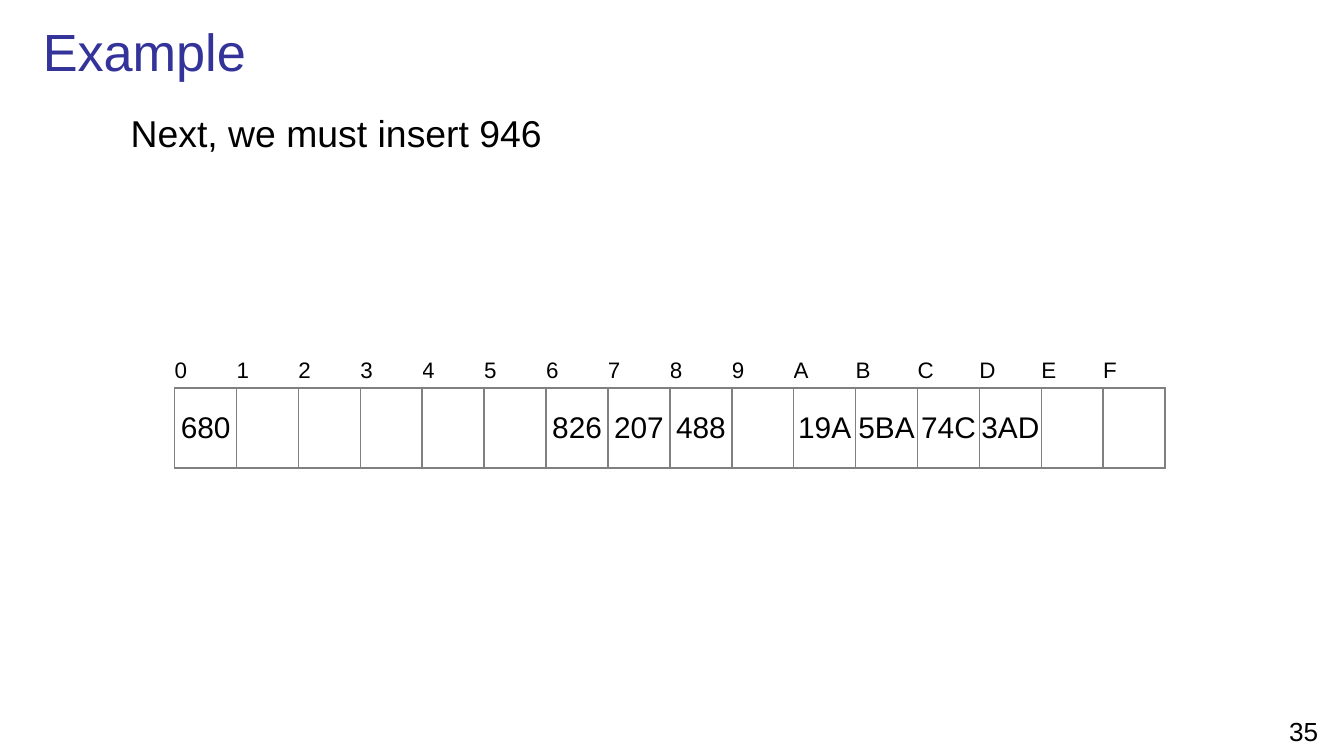
"""Build the slide showing a 16-bin hash table before inserting 946."""
from lxml import etree
from pptx import Presentation
from pptx.dml.color import RGBColor
from pptx.enum.text import MSO_ANCHOR, PP_ALIGN
from pptx.oxml.ns import qn
from pptx.util import Cm, Pt

BLACK = RGBColor(0x00, 0x00, 0x00)
TITLE_BLUE = RGBColor(0x33, 0x33, 0x99)
GRID_GREY = RGBColor(0x80, 0x80, 0x80)
LEFT, CENTER = PP_ALIGN.LEFT, PP_ALIGN.CENTER
TOP, MIDDLE = MSO_ANCHOR.TOP, MSO_ANCHOR.MIDDLE

FONT = "Arial"
BINS = "0123456789ABCDEF"
STORED = {"0": "680", "6": "826", "7": "207", "8": "488",
          "A": "19A", "B": "5BA", "C": "74C", "D": "3AD"}
BIN_WIDTH, LABEL_HEIGHT, BIN_HEIGHT = Cm(1.17), Cm(0.63), Cm(1.52)


def style_paragraph(paragraph, size, color=BLACK, align=LEFT):
    paragraph.alignment = align
    paragraph.font.name = FONT
    paragraph.font.size = Pt(size)
    paragraph.font.bold = False
    paragraph.font.color.rgb = color


def add_text(slide, text, box, size, color=BLACK, align=LEFT, anchor=TOP):
    frame = slide.shapes.add_textbox(*(Cm(length) for length in box)).text_frame
    frame.word_wrap = True
    frame.vertical_anchor = anchor
    frame.text = text
    style_paragraph(frame.paragraphs[0], size, color, align)
    return frame


def add_borders(cell, sides):
    properties = cell._tc.get_or_add_tcPr()
    for side in sides:
        border = etree.SubElement(properties, qn(f"a:ln{side}"), w=str(Pt(1)))
        fill = etree.SubElement(border, qn("a:solidFill"))
        etree.SubElement(fill, qn("a:srgbClr"), val=str(GRID_GREY))


def fill_cell(cell, text, size, align, sides):
    cell.margin_left = cell.margin_right = cell.margin_top = cell.margin_bottom = 0
    cell.vertical_anchor = MIDDLE
    cell.text = text
    style_paragraph(cell.text_frame.paragraphs[0], size, align=align)
    add_borders(cell, sides)
    cell.fill.background()


def add_hash_table(slide, left, top):
    table = slide.shapes.add_table(2, len(BINS), left, top, BIN_WIDTH * len(BINS),
                                   LABEL_HEIGHT + BIN_HEIGHT).table
    table.first_row = table.horz_banding = False
    table.rows[0].height, table.rows[1].height = LABEL_HEIGHT, BIN_HEIGHT
    for column, label in enumerate(BINS):
        table.columns[column].width = BIN_WIDTH
        fill_cell(table.cell(0, column), label, 12, LEFT, "B")
        fill_cell(table.cell(1, column), STORED.get(label, ""), 16, CENTER, "LRTB")


def main():
    presentation = Presentation()
    presentation.slide_width, presentation.slide_height = Cm(25.4), Cm(14.29)
    slide = presentation.slides.add_slide(presentation.slide_layouts[6])
    add_text(slide, "35", (23.88, 13.39, 1.52, 0.76), 14, align=CENTER)
    instruction = add_text(slide, "Next, we must insert 946", (1.12, 1.96, 23.27, 11.13), 20)
    instruction.margin_left = Cm(1.35)
    instruction.paragraphs[0].space_before = Pt(4)
    add_text(slide, "Example", (0.56, 0.2, 24.74, 1.5), 28, TITLE_BLUE, anchor=MIDDLE)
    add_hash_table(slide, Cm(3.3), Cm(6.7))
    presentation.save("out.pptx")


if __name__ == "__main__":
    main()
